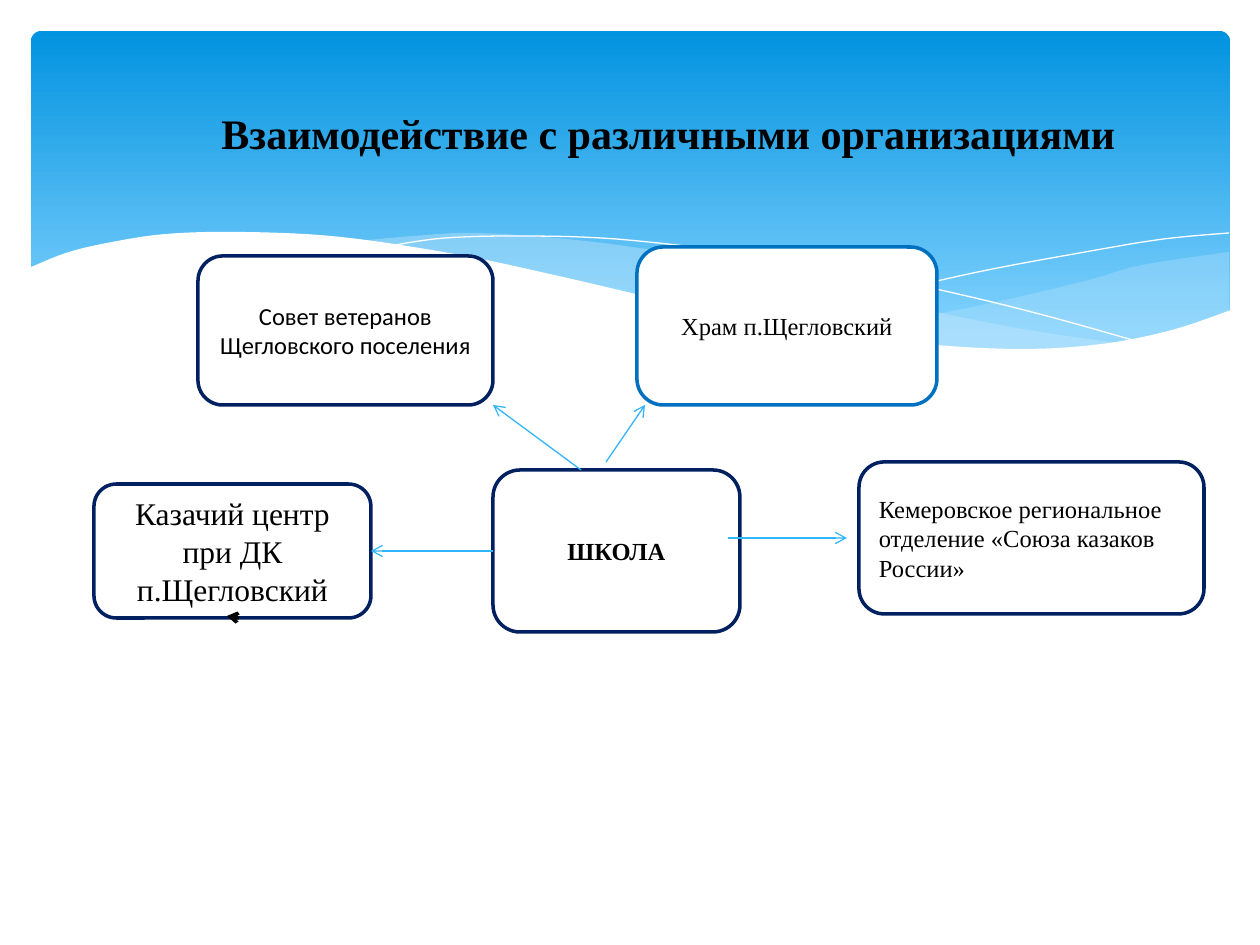
from pptx import Presentation
from pptx.dml.color import RGBColor
from pptx.enum.shapes import MSO_CONNECTOR, MSO_SHAPE
from pptx.enum.text import MSO_ANCHOR, PP_ALIGN
from pptx.oxml.ns import qn
from pptx.util import Pt
from lxml import etree

ROUNDED, STRAIGHT = MSO_SHAPE.ROUNDED_RECTANGLE, MSO_CONNECTOR.STRAIGHT
LEFT, CENTER = PP_ALIGN.LEFT, PP_ALIGN.CENTER
MIDDLE, BOTTOM = MSO_ANCHOR.MIDDLE, MSO_ANCHOR.BOTTOM
PX = 914400 / 126

THEME = {
    "white": RGBColor(0xFF, 0xFF, 0xFF),
    "ink": RGBColor(0, 0, 0),
    "navy": RGBColor(0x00, 0x20, 0x60),
    "blue": RGBColor(0x00, 0x70, 0xC0),
    "arrow": RGBColor(0x31, 0xB6, 0xFD),
    "sky_top": RGBColor(0x02, 0x93, 0xE0),
    "sky_bottom": RGBColor(0x83, 0xD3, 0xFE),
    "mist": RGBColor(0xC6, 0xE7, 0xFC),
    "serif": "Times New Roman",
    "sans": "Calibri",
    "title": 24,
    "large": 18,
    "body": 14,
}


def write(shape, text, size="body", font="serif", bold=False, align=CENTER,
          anchor=MIDDLE, indent=0):
    frame = shape.text_frame
    frame.word_wrap = True
    frame.vertical_anchor = anchor
    frame.text = text
    for paragraph in frame.paragraphs:
        paragraph.alignment = align
        if indent:
            paragraph._p.get_or_add_pPr().set("indent", str(round(indent * PX)))
        paragraph.font.size = Pt(THEME[size])
        paragraph.font.name = THEME[font]
        paragraph.font.bold = bold
        paragraph.font.color.rgb = THEME["ink"]


def smooth(knots, steps=6):
    """Catmull-Rom curve through the knots."""
    padded = [knots[0], *knots, knots[-1]]
    curve = [knots[0]]
    for a, b, c, d in zip(padded, padded[1:], padded[2:], padded[3:]):
        for step in range(1, steps + 1):
            t = step / steps
            curve.append(tuple(
                (2 * q + (r - p) * t + (2 * p - 5 * q + 4 * r - s) * t ** 2
                 + (3 * q - p - 3 * r + s) * t ** 3) / 2
                for p, q, r, s in zip(a, b, c, d)))
    return curve


prs = Presentation()
prs.slide_width, prs.slide_height = round(1260 * PX), round(945 * PX)
slide = prs.slides.add_slide(prs.slide_layouts[6])
shapes = slide.shapes

# Sky panel
sky = shapes.add_shape(ROUNDED, *(round(v * PX) for v in (31, 31, 1199, 340)))
sky.adjustments[0] = 0.03
sky.shadow.inherit = False
sky.line.fill.background()
sky.fill.gradient()
sky.fill.gradient_angle = 270
for stop, position, colour in zip(sky.fill.gradient_stops, (0, 0.9), ("sky_top", "sky_bottom")):
    stop.position = position
    stop.color.rgb = THEME[colour]

# Waves: edges, fill, opacity in percent; a wave without fill is a thin line
waves = [
    ([[(1229, 252), (1142, 265), (1085, 281), (982, 305), (833, 334)],
      [(833, 334), (922, 345), (1012, 350), (1099, 345), (1169, 331), (1229, 311)]],
     "mist", 29),
    ([[(1125, 344), (1017, 328), (890, 302), (793, 280), (699, 258), (586, 241),
       (479, 233), (413, 236), (360, 241)],
      [(360, 241), (456, 256), (566, 280), (713, 312), (838, 335), (942, 348),
       (1031, 350), (1092, 348), (1125, 344)]],
     "mist", 40),
    ([[(389, 246), (445, 238), (524, 236), (616, 239), (733, 252), (838, 268),
       (958, 294), (1047, 316), (1143, 343)]], None, 100),
    ([[(772, 324), (876, 296), (978, 272), (1091, 251), (1164, 239), (1229, 233)]],
     None, 100),
    ([[(1231, 310), (1172, 330), (1102, 344), (1019, 349), (915, 343), (789, 325),
       (667, 301), (563, 277), (460, 255), (341, 237), (243, 232), (166, 234),
       (107, 243), (66, 253), (29, 268)],
      [(29, 415), (1231, 415)]],
     "white", 100),
]
for edges, fill, opacity in waves:
    outline = [point for edge in edges for point in smooth(edge)]
    builder = shapes.build_freeform(*(round(v * PX) for v in outline[0]))
    builder.add_line_segments([(round(x * PX), round(y * PX)) for x, y in outline[1:]],
                              close=fill is not None)
    wave = builder.convert_to_shape()
    wave.shadow.inherit = False
    if fill:
        wave.fill.solid()
        wave.fill.fore_color.rgb = THEME[fill]
        wave.line.fill.background()
        if opacity < 100:
            colour = wave.element.spPr.find(qn("a:solidFill"))[0]
            etree.SubElement(colour, qn("a:alpha")).set("val", str(opacity * 1000))
    else:
        wave.fill.background()
        wave.line.color.rgb = THEME["white"]
        wave.line.width = Pt(0)

# Title
title = shapes.add_textbox(*(round(v * PX) for v in (0, -1, 1275, 165)))
write(title, "Взаимодействие с различными организациями", size="title", bold=True,
      anchor=BOTTOM, indent=62)

# School and its partners
organizations = [
    ("union", (859, 462, 345, 152), "navy",
     "Кемеровское региональное\nотделение «Союза казаков России»", {"align": LEFT}),
    ("cossacks", (94, 484, 277, 134), "navy",
     "Казачий центр при ДК п.Щегловский", {"size": "large"}),
    ("church", (637, 247, 300, 158), "blue", "Храм п.Щегловский", {}),
    ("veterans", (198, 256, 295, 149), "navy",
     "Совет ветеранов Щегловского поселения", {"font": "sans"}),
    ("school", (493, 470, 247, 162), "navy", "ШКОЛА", {"bold": True}),
]
boxes = {}
for key, bounds, border, text, style in organizations:
    box = shapes.add_shape(ROUNDED, *(round(v * PX) for v in bounds))
    box.shadow.inherit = False
    box.fill.solid()
    box.fill.fore_color.rgb = THEME["white"]
    box.line.color.rgb = THEME[border]
    box.line.width = Pt(2)
    write(box, text, **style)
    boxes[key] = box

# Arrows: ends, colour, width, joined boxes with their sides
arrows = [
    ((233, 617, 227, 616), "ink", 2, None),
    ((728, 538, 847, 538), "arrow", 0.75, None),
    ((606, 462, 645, 405), "arrow", 0.75, None),
    ((493, 551, 371, 551), "arrow", 0.75, (("school", 1), ("cossacks", 3))),
    ((581, 470, 493, 405), "arrow", 0.75, None),
]
for ends, colour, width, joints in arrows:
    arrow = shapes.add_connector(STRAIGHT, *(round(v * PX) for v in ends))
    if joints:
        (start, start_side), (finish, finish_side) = joints
        arrow.begin_connect(boxes[start], start_side)
        arrow.end_connect(boxes[finish], finish_side)
    arrow.line.color.rgb = THEME[colour]
    arrow.line.width = Pt(width)
    properties = arrow.element.spPr
    etree.SubElement(properties.find(qn("a:ln")), qn("a:tailEnd")).set("type", "arrow")
    etree.SubElement(properties, qn("a:effectLst"))

prs.save("out.pptx")
